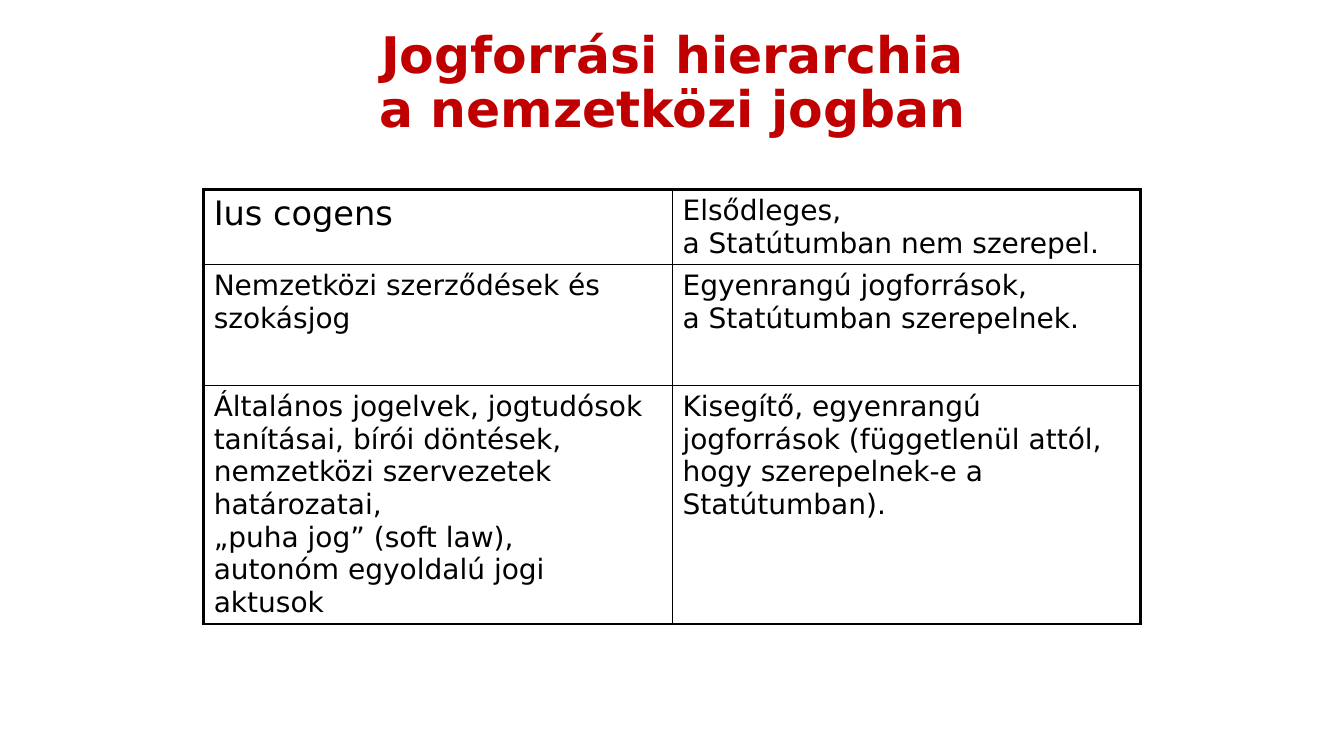
from dataclasses import dataclass

from lxml.etree import fromstring
from pptx import Presentation
from pptx.dml.color import RGBColor
from pptx.enum.text import MSO_ANCHOR, PP_ALIGN
from pptx.oxml.ns import nsdecls
from pptx.util import Inches, Pt

# Content
TITLE = ["Jogforrási hierarchia", "a nemzetközi jogban"]
ROWS = [
    (["Ius cogens"],
     ["Elsődleges,", "a Statútumban nem szerepel."]),
    (["Nemzetközi szerződések és szokásjog"],
     ["Egyenrangú jogforrások,", "a Statútumban szerepelnek."]),
    (["Általános jogelvek, jogtudósok tanításai, bírói döntések, "
      "nemzetközi szervezetek határozatai,",
      "„puha jog” (soft law),",
      "autonóm egyoldalú jogi aktusok"],
     ["Kisegítő, egyenrangú jogforrások (függetlenül attól, "
      "hogy szerepelnek-e a Statútumban)."]),
]
COL_WIDTHS = [4.65, 4.64]
ROW_HEIGHTS = [0.74, 1.2, 2.34]


@dataclass(frozen=True)
class Theme:
    font: str = "DejaVu Sans"
    accent: str = "C00000"
    ink: str = "000000"
    title: int = 36
    lead: int = 24
    body: int = 20
    outer: float = 2.25
    inner: float = 1


THEME = Theme()


def add_run(p, text, size=THEME.body, color=THEME.ink, bold=False):
    r = p.add_run()
    r.text = text
    r.font.name = THEME.font
    r.font.size = Pt(size)
    r.font.bold = bold
    r.font.color.rgb = RGBColor.from_string(color)


def set_borders(cell, widths):
    """Draw the cell edges; widths are points for left, right, top, bottom."""
    tc_pr = cell._tc.get_or_add_tcPr()
    for i, (side, width) in enumerate(zip("LRTB", widths)):
        tc_pr.insert(i, fromstring(
            f'<a:ln{side} {nsdecls("a")} w="{int(Pt(width))}"><a:solidFill>'
            f'<a:srgbClr val="{THEME.ink}"/></a:solidFill></a:ln{side}>'))


prs = Presentation()
prs.slide_width, prs.slide_height = Inches(13.33), Inches(7.5)
s = prs.slides.add_slide(prs.slide_layouts[5])

# Title
sp = s.shapes.title
sp.left, sp.top, sp.width, sp.height = map(Inches, (1.67, 0.21, 10, 1.25))
tf = sp.text_frame
tf.word_wrap = True
tf.vertical_anchor = MSO_ANCHOR.MIDDLE
p = tf.paragraphs[0]
p.alignment = PP_ALIGN.CENTER
p.line_spacing = 0.9
for i, line in enumerate(TITLE):
    if i:
        p.add_line_break()
    add_run(p, line, size=THEME.title, color=THEME.accent, bold=True)

# Table of sources
n_rows, n_cols = len(ROWS), len(COL_WIDTHS)
table = s.shapes.add_table(
    n_rows, n_cols, Inches(2.02), Inches(1.88),
    Inches(sum(COL_WIDTHS)), Inches(sum(ROW_HEIGHTS))).table
table.first_row = table.horz_banding = False
for col, width in zip(table.columns, COL_WIDTHS):
    col.width = Inches(width)
for row, height in zip(table.rows, ROW_HEIGHTS):
    row.height = Inches(height)

for i, row in enumerate(ROWS):
    for j, lines in enumerate(row):
        cell = table.cell(i, j)
        cell.fill.background()
        edges = (j == 0, j == n_cols - 1, i == 0, i == n_rows - 1)
        set_borders(cell, [THEME.outer if e else THEME.inner for e in edges])
        size = THEME.lead if i == j == 0 else THEME.body
        tf = cell.text_frame
        for k, line in enumerate(lines):
            p = tf.add_paragraph() if k else tf.paragraphs[0]
            add_run(p, line, size=size)

prs.save("out.pptx")
